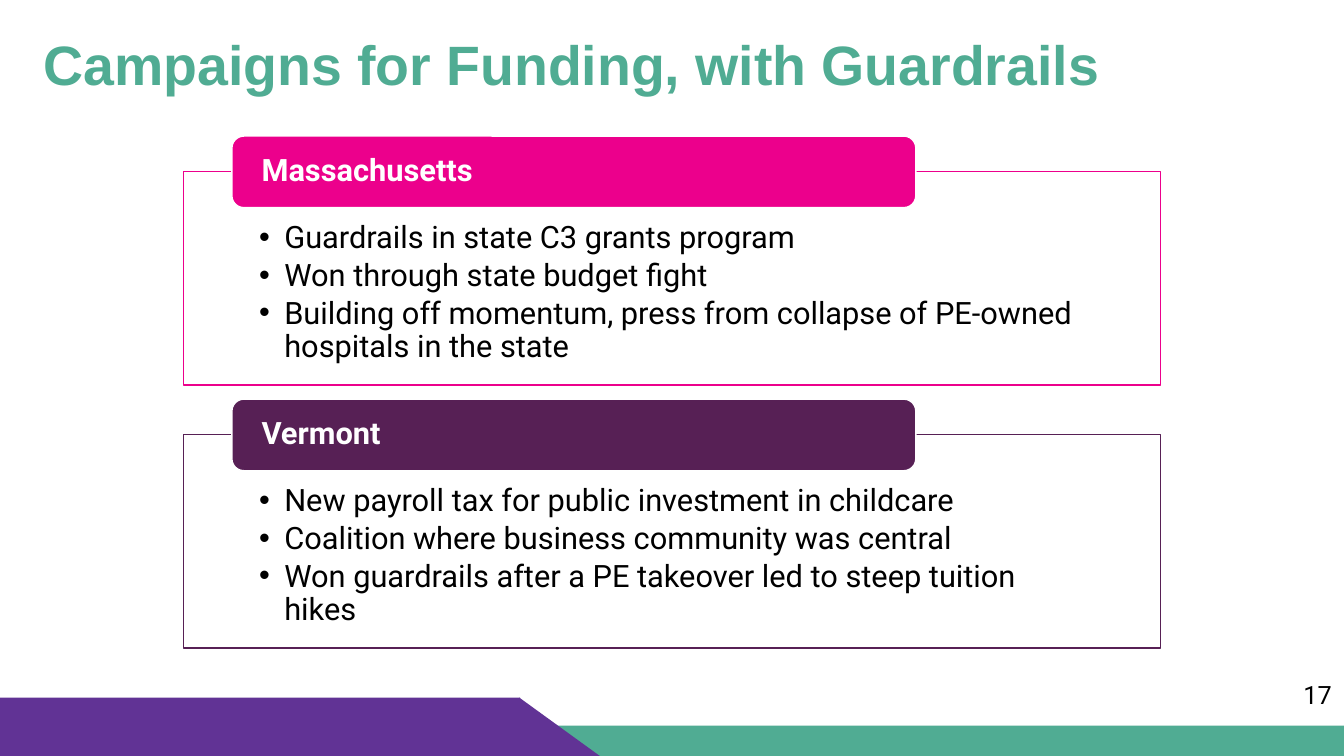
from pptx import Presentation, util as u
from pptx.dml.color import RGBColor
from pptx.enum import shapes, text
from pptx.oxml.ns import qn
from lxml import etree

WHITE = RGBColor(0xFF, 0xFF, 0xFF)
BLACK = RGBColor(0x00, 0x00, 0x00)
GREEN = RGBColor(0x50, 0xAC, 0x93)
PURPLE = RGBColor(0x61, 0x33, 0x95)
PINK = RGBColor(0xEC, 0x00, 0x8C)
PLUM = RGBColor(0x57, 0x20, 0x55)

PRESET = shapes.MSO_SHAPE
ANCHOR = text.MSO_ANCHOR

CAMPAIGNS = [
    ("Massachusetts", PINK, [
        "Guardrails in state C3 grants program",
        "Won through state budget fight",
        "Building off momentum, press from collapse of PE-owned hospitals in the state",
    ]),
    ("Vermont", PLUM, [
        "New payroll tax for public investment in childcare",
        "Coalition where business community was central",
        "Won guardrails after a PE takeover led to steep tuition hikes",
    ]),
]


def add_bullet(paragraph):
    props = paragraph._p.get_or_add_pPr()
    props.set("marL", str(u.Inches(0.25)))
    props.set("indent", str(u.Inches(-0.25)))
    etree.SubElement(props, qn("a:buFont")).set("typeface", "Arial")
    etree.SubElement(props, qn("a:buChar")).set("char", "•")


def write(frame, lines, size=22, color=BLACK, font="Roboto", bold=False,
          anchor=ANCHOR.TOP, insets=(0.1, 0.05, 0.1, 0.05), spacing=0.9,
          gap=0, bullets=False):
    frame.word_wrap = True
    frame.auto_size = text.MSO_AUTO_SIZE.NONE
    frame.vertical_anchor = anchor
    (frame.margin_left, frame.margin_top,
     frame.margin_right, frame.margin_bottom) = map(u.Inches, insets)
    for index, line in enumerate(lines):
        paragraph = frame.add_paragraph() if index else frame.paragraphs[0]
        paragraph.alignment = text.PP_ALIGN.LEFT
        paragraph.line_spacing = spacing
        paragraph.space_before = u.Pt(gap if index else 0)
        if bullets:
            add_bullet(paragraph)
        run = paragraph.add_run()
        run.text = line
        run.font.name = font
        run.font.size = u.Pt(size)
        run.font.bold = bold
        run.font.color.rgb = color


def add_block(slide, preset, box, fill, outline=None):
    block = slide.shapes.add_shape(preset, *map(u.Inches, box))
    block.shadow.inherit = False
    block.fill.solid()
    block.fill.fore_color.rgb = fill
    if outline is None:
        block.line.fill.background()
    else:
        block.line.color.rgb = outline
        block.line.width = u.Pt(1)
    return block


def add_title(slide, box, wording):
    title = slide.shapes.title
    title.left, title.top, title.width, title.height = map(u.Inches, box)
    write(title.text_frame, [wording], size=39.6, color=GREEN, font="Arial",
          bold=True, anchor=ANCHOR.MIDDLE)


def add_footer(slide, box, number):
    left, top, width, height = box
    band, slope_left, slope = 0.3, 5.15, 0.8
    # Green strip with the purple tab over it
    add_block(slide, PRESET.RECTANGLE,
              (left, top + height - band, width, band), GREEN)
    add_block(slide, PRESET.RECTANGLE,
              (left, top, slope_left + 0.01, height), PURPLE)
    add_block(slide, PRESET.RIGHT_TRIANGLE,
              (left + slope_left, top, slope, height), PURPLE)
    # Page number
    page = slide.shapes.add_textbox(
        *map(u.Inches, (left + width - 0.5, top - 0.23, 0.5, 0.4)))
    write(page.text_frame, [number], size=18, spacing=1)


def add_campaign(slide, box, state, color, points):
    left, top, width, height = box
    overlap = 0.35
    # Outlined panel with the points
    panel = add_block(slide, PRESET.RECTANGLE,
                      (left, top + overlap, width, height - overlap), WHITE, color)
    tint = panel.fill._xPr.find(".//" + qn("a:srgbClr"))
    etree.SubElement(tint, qn("a:alpha")).set("val", "90000")
    write(panel.text_frame, points, insets=(0.75, 0.5, 0.75, 0.17),
          gap=3.3, bullets=True)
    # State heading across the panel's top edge
    heading = add_block(slide, PRESET.ROUNDED_RECTANGLE,
                        (left + 0.48, top, width * 0.7, 0.71), color, WHITE)
    write(heading.text_frame, [state], color=WHITE, bold=True,
          anchor=ANCHOR.MIDDLE, insets=(0.26, 0, 0.26, 0))


def main():
    deck = Presentation()
    deck.slide_width, deck.slide_height = u.Inches(13.33), u.Inches(7.5)
    slide = deck.slides.add_slide(deck.slide_layouts[5])
    add_footer(slide, (0, 6.92, 13.33, 0.58), "17")
    add_title(slide, (0.33, 0.33, 13, 0.67), "Campaigns for Funding, with Guardrails")
    for row, campaign in enumerate(CAMPAIGNS):
        add_campaign(slide, (1.82, 1.35 + row * 2.61, 9.69, 2.47), *campaign)
    deck.save("out.pptx")


if __name__ == "__main__":
    main()
